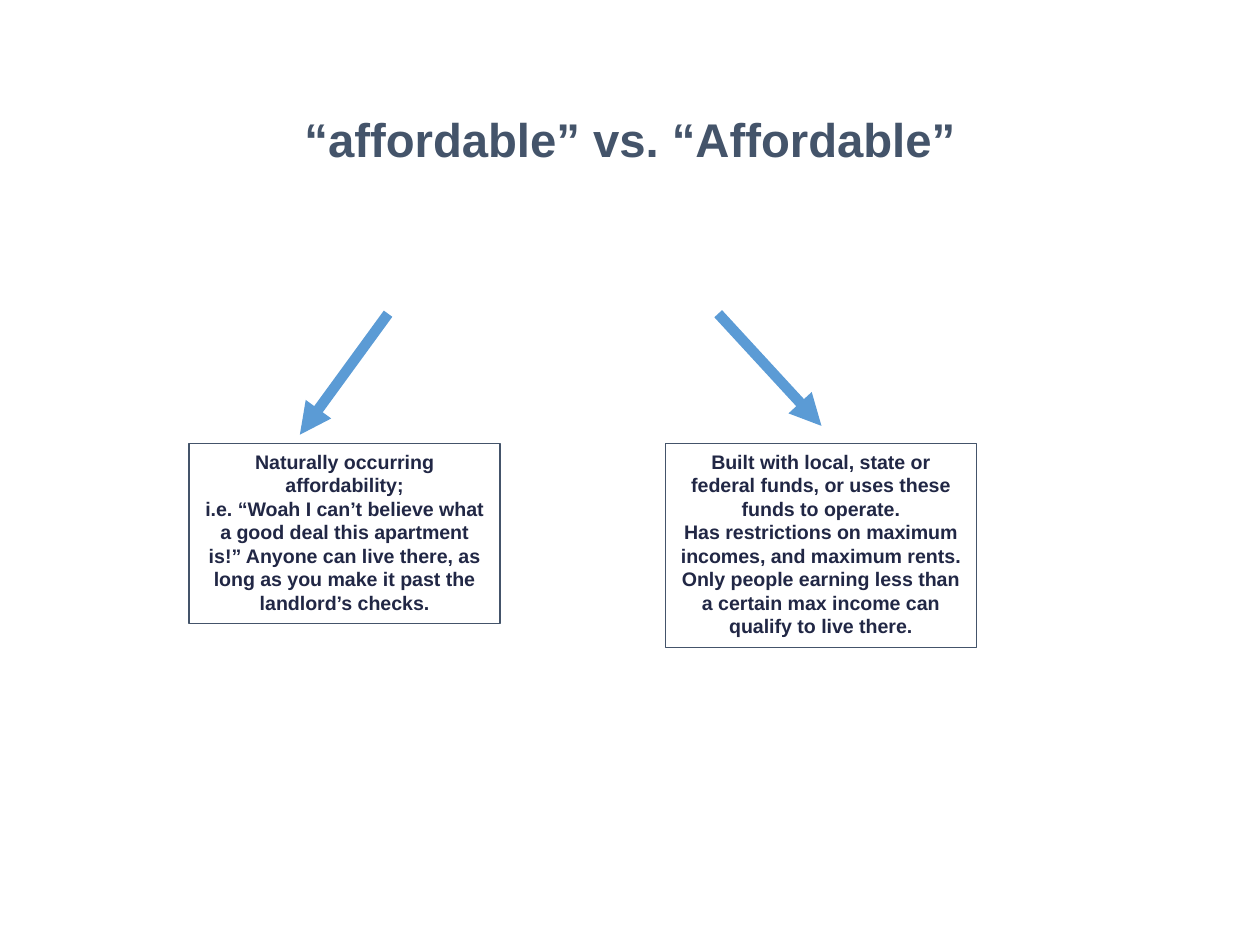
from lxml import etree
from pptx import Presentation
from pptx import util as u
from pptx.dml.color import RGBColor
from pptx.enum import shapes, text
from pptx.oxml.ns import qn

SLATE = RGBColor(0x44, 0x54, 0x6A)
NAVY = RGBColor(0x21, 0x27, 0x45)
BLUE = RGBColor(0x5B, 0x9B, 0xD5)

TOP, WIDTH = 3.52, 2.47
ARROW_TOP = 2.49

# Each side: box left, box height, arrow start x, arrow end, paragraphs
SIDES = [
    (1.5, 1.43, 3.08, (2.38, 3.45), [
        "Naturally occurring affordability;",
        "i.e. “Woah I can’t believe what a good deal this apartment is!” "
        "Anyone can live there, as long as you make it past the "
        "landlord’s checks.",
    ]),
    (5.28, 1.62, 5.7, (6.52, 3.38), [
        "Built with local, state or federal funds, or uses these funds "
        "to operate.",
        "Has restrictions on maximum incomes, and maximum rents. Only people "
        "earning less than a certain max income can qualify to live there.",
    ]),
]


class Deck:
    def __init__(self, font="Arial"):
        self.font = font
        self.prs = Presentation()
        self.prs.slide_width = u.Inches(10)
        self.prs.slide_height = u.Inches(7.5)
        self.slide = self.prs.slides.add_slide(self.prs.slide_layouts[5])

    def style(self, para, size, color):
        para.alignment = text.PP_ALIGN.CENTER
        para.font.name = self.font
        para.font.size = u.Pt(size)
        para.font.bold = True
        para.font.color.rgb = color

    def title(self, words, left, top, width, height):
        shape = self.slide.shapes.title
        shape.left, shape.top = u.Inches(left), u.Inches(top)
        shape.width, shape.height = u.Inches(width), u.Inches(height)
        frame = shape.text_frame
        frame.text = words
        frame.vertical_anchor = text.MSO_ANCHOR.MIDDLE
        para = frame.paragraphs[0]
        para.line_spacing = 0.9
        self.style(para, 27, SLATE)

    def arrow(self, start, end):
        line = self.slide.shapes.add_connector(
            shapes.MSO_CONNECTOR.STRAIGHT,
            *(u.Inches(n) for n in (*start, *end)))
        line.line.color.rgb = BLUE
        line.line.width = u.Pt(6)
        etree.SubElement(line.line._get_or_add_ln(), qn("a:tailEnd"),
                         type="triangle")
        etree.SubElement(line._element.spPr, qn("a:effectLst"))

    def box(self, lines, left, top, width, height):
        shape = self.slide.shapes.add_shape(
            shapes.MSO_SHAPE.RECTANGLE,
            *(u.Inches(n) for n in (left, top, width, height)))
        shape.shadow.inherit = False
        shape.fill.background()
        shape.line.color.rgb = SLATE
        shape.line.width = u.Pt(0.75)
        frame = shape.text_frame
        frame.word_wrap = True
        frame.auto_size = text.MSO_AUTO_SIZE.SHAPE_TO_FIT_TEXT
        frame.vertical_anchor = text.MSO_ANCHOR.TOP
        frame.text = "\n".join(lines)
        for para in frame.paragraphs:
            self.style(para, 11.2, NAVY)


def main():
    deck = Deck()
    deck.title("“affordable” vs. “Affordable”", 0.69, 0.4, 8.62, 1.45)
    for left, height, start, end, lines in SIDES:
        deck.arrow((start, ARROW_TOP), end)
        deck.box(lines, left, TOP, WIDTH, height)
    deck.prs.save("out.pptx")


if __name__ == "__main__":
    main()
